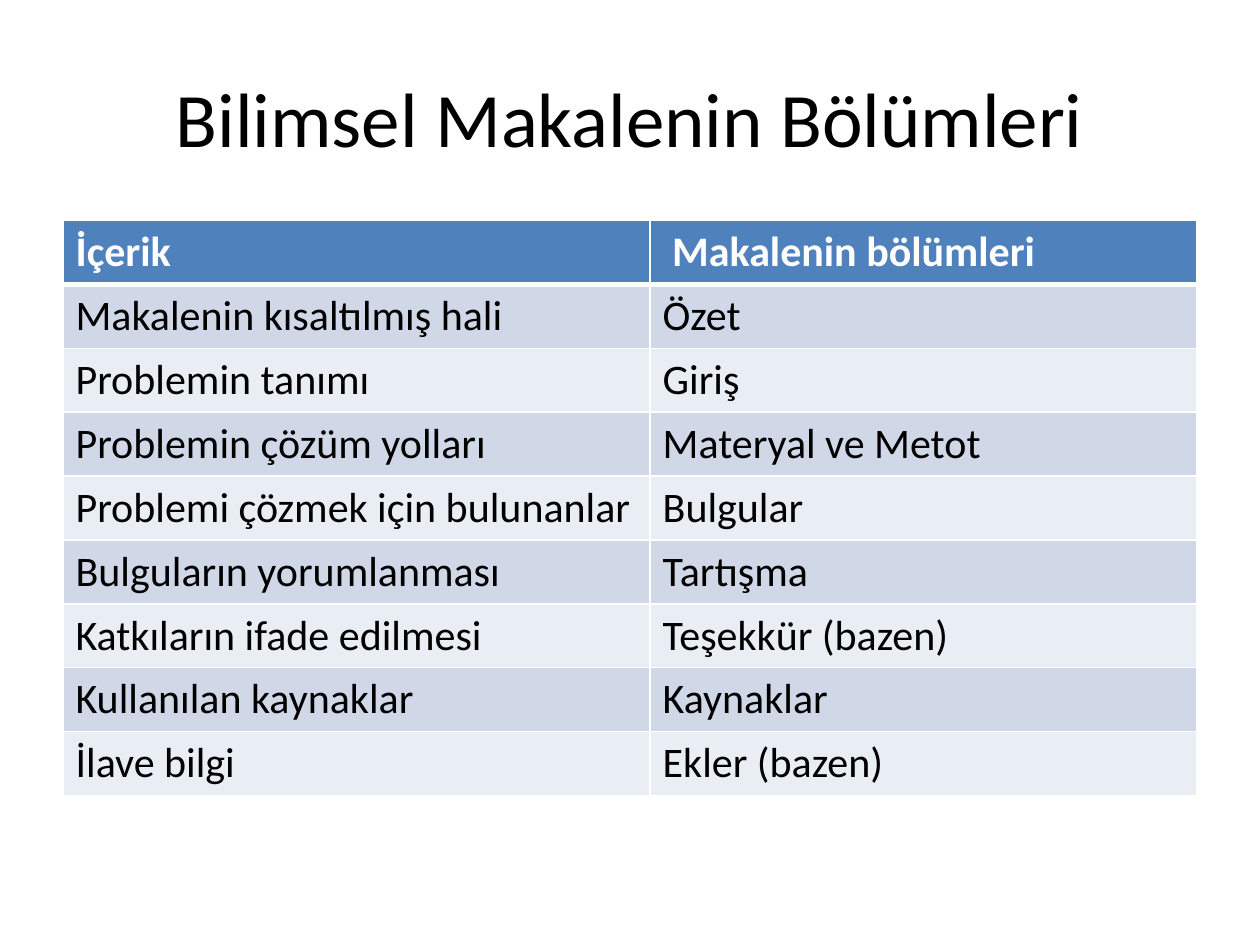
import pptx
import pptx.dml.color
import pptx.enum.text
import pptx.oxml
import pptx.oxml.ns
import pptx.util

Pt = pptx.util.Pt
WHITE, BLACK, BLUE = "FFFFFF", "000000", "4F81BD"
BANDS = ("D0D8E8", "E9EDF4")
ROWS = (
    ("İçerik", " Makalenin bölümleri"),
    ("Makalenin kısaltılmış hali", "Özet"),
    ("Problemin tanımı", "Giriş"),
    ("Problemin çözüm yolları", "Materyal ve Metot"),
    ("Problemi çözmek için bulunanlar", "Bulgular"),
    ("Bulguların yorumlanması", "Tartışma"),
    ("Katkıların ifade edilmesi", "Teşekkür (bazen)"),
    ("Kullanılan kaynaklar", "Kaynaklar"),
    ("İlave bilgi", "Ekler (bazen)"),
)


def color(code):
    return pptx.dml.color.RGBColor.from_string(code)


class Page:
    def __init__(self, slide, font="Calibri"):
        self.slide = slide
        self.font = font

    def text(self, para, words, size, ink, bold=False):
        run = para.add_run()
        run.text = words
        run.font.name = self.font
        run.font.size = Pt(size)
        run.font.bold = bold
        run.font.color.rgb = color(ink)

    def title(self, words, left, top, width, height):
        shape = self.slide.shapes.title
        shape.left, shape.top = Pt(left), Pt(top)
        shape.width, shape.height = Pt(width), Pt(height)
        frame = shape.text_frame
        frame.vertical_anchor = pptx.enum.text.MSO_ANCHOR.MIDDLE
        para = frame.paragraphs[0]
        para.alignment = pptx.enum.text.PP_ALIGN.CENTER
        self.text(para, words, 44, BLACK)

    def edge(self, cell, side, width):
        """Draw a white border on one side (L, R, T or B)."""
        line = pptx.oxml.parse_xml(
            f'<a:ln{side} {pptx.oxml.ns.nsdecls("a")} w="{Pt(width)}">'
            f'<a:solidFill><a:srgbClr val="{WHITE}"/></a:solidFill></a:ln{side}>'
        )
        cell._tc.get_or_add_tcPr().append(line)

    def table(self, rows, left, top, widths, height):
        frame = self.slide.shapes.add_table(
            len(rows), len(widths), Pt(left), Pt(top),
            Pt(sum(widths)), Pt(height * len(rows)))
        grid = frame.table
        for col, width in zip(grid.columns, widths):
            col.width = Pt(width)
        for i, row in enumerate(rows):
            grid.rows[i].height = Pt(height)
            head = i == 0
            for j, words in enumerate(row):
                cell = grid.cell(i, j)
                # The rule under the header row is shared by rows 0 and 1.
                edges = {"L": 1, "R": 1, "T": 3 if i == 1 else 1, "B": 3 if head else 1}
                for side, width in edges.items():
                    self.edge(cell, side, width)
                cell.fill.solid()
                cell.fill.fore_color.rgb = color(BLUE if head else BANDS[(i - 1) % 2])
                self.text(cell.text_frame.paragraphs[0], words, 24,
                          WHITE if head else BLACK, head)


def main():
    deck = pptx.Presentation()
    deck.slide_width, deck.slide_height = Pt(720), Pt(540)
    page = Page(deck.slides.add_slide(deck.slide_layouts[5]))
    page.title("Bilimsel Makalenin Bölümleri", 36, 21.6, 648, 90)
    page.table(ROWS, 36, 126, (335.5, 312.5), 36.5)
    deck.save("out.pptx")


if __name__ == "__main__":
    main()
